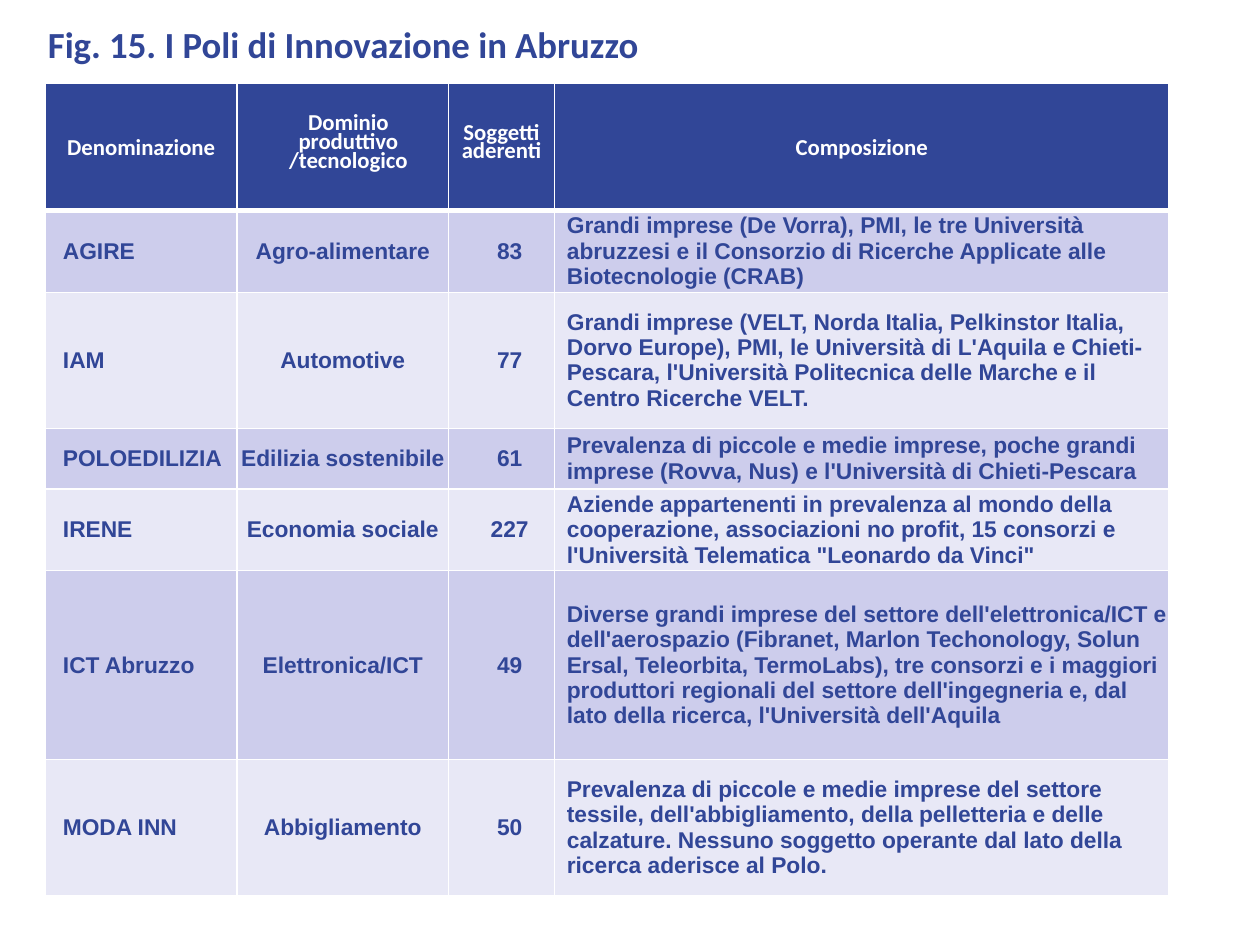
from lxml.etree import SubElement
from pptx import Presentation
from pptx.dml.color import RGBColor
from pptx.enum.text import MSO_ANCHOR, MSO_AUTO_SIZE, PP_ALIGN
from pptx.oxml.ns import qn
from pptx.util import Inches, Pt

COLORS = {"blue": "314697", "white": "FFFFFF", "odd": "CDCDEC", "even": "E8E8F6"}
TITLE = "Fig. 15. I Poli di Innovazione in Abruzzo"
HEADERS = ["Denominazione", "Dominio\nproduttivo\n/tecnologico", "Soggetti aderenti", "Composizione"]
CLUSTERS = [
    ("AGIRE", "Agro-alimentare", 83,
     "Grandi imprese (De Vorra), PMI, le tre Università abruzzesi e il Consorzio di "
     "Ricerche Applicate alle Biotecnologie (CRAB)"),
    ("IAM", "Automotive", 77,
     "Grandi imprese (VELT, Norda Italia, Pelkinstor Italia, Dorvo Europe), PMI, le "
     "Università di L'Aquila e Chieti-Pescara, l'Università Politecnica delle Marche e il "
     "Centro Ricerche VELT."),
    ("POLOEDILIZIA", "Edilizia sostenibile", 61,
     "Prevalenza di piccole e medie imprese, poche grandi imprese (Rovva, Nus) e "
     "l'Università di Chieti-Pescara"),
    ("IRENE", "Economia sociale", 227,
     "Aziende appartenenti in prevalenza al mondo della cooperazione, associazioni no "
     "profit, 15 consorzi e l'Università Telematica \"Leonardo da Vinci\""),
    ("ICT Abruzzo", "Elettronica/ICT", 49,
     "Diverse grandi imprese del settore dell'elettronica/ICT e dell'aerospazio "
     "(Fibranet, Marlon Techonology, Solun Ersal, Teleorbita, TermoLabs), tre consorzi e i "
     "maggiori produttori regionali del settore dell'ingegneria e, dal lato della ricerca, "
     "l'Università dell'Aquila"),
    ("MODA INN", "Abbigliamento", 50,
     "Prevalenza di piccole e medie imprese del settore tessile, dell'abbigliamento, della "
     "pelletteria e delle calzature. Nessuno soggetto operante dal lato della ricerca "
     "aderisce al Polo."),
]
COLUMN_WIDTHS = [1.52, 1.68, 0.84, 4.88]
ROW_HEIGHTS = [1.02, 0.65, 1.08, 0.48, 0.65, 1.5, 1.08]
CELL_MARGIN = 0.02
HEADER_INDENTS = [0, 0.09, 0, 0]
BODY_INDENTS = [0.12, 0, 0.13, 0.08]
HEADER_SPACING = [1.15, Pt(10.8), Pt(10.8), 1.15]
BODY_ALIGNMENT = [PP_ALIGN.LEFT, PP_ALIGN.CENTER, PP_ALIGN.CENTER, PP_ALIGN.LEFT]


def color(name):
    return RGBColor.from_string(COLORS[name])


def set_font(paragraph, name, size, color_name):
    font = paragraph.font
    font.name, font.size, font.bold = name, Pt(size), True
    font.color.rgb = color(color_name)


def set_borders(cell, top, bottom):
    """Draw white borders; top and bottom are widths in points, the sides are 1."""
    properties = cell._tc.get_or_add_tcPr()
    for side, width in (("L", 1), ("R", 1), ("T", top), ("B", bottom)):
        line = SubElement(properties, qn(f"a:ln{side}"), w=str(Pt(width)))
        fill = SubElement(line, qn("a:solidFill"))
        SubElement(fill, qn("a:srgbClr"), val=COLORS["white"])


def fill_cell(cell, row, column, text):
    header = row == 0
    indent = (HEADER_INDENTS if header else BODY_INDENTS)[column]
    set_borders(cell, top=3 if row <= 1 else 1, bottom=3 if header else 1)
    cell.fill.solid()
    cell.fill.fore_color.rgb = color("blue" if header else "odd" if row % 2 else "even")
    cell.vertical_anchor = MSO_ANCHOR.MIDDLE
    cell.margin_left = Inches(CELL_MARGIN + indent)
    cell.margin_right = Inches(CELL_MARGIN)
    cell.margin_top = cell.margin_bottom = 0
    cell.text_frame.text = str(text)
    for paragraph in cell.text_frame.paragraphs:
        if header:
            paragraph.alignment = PP_ALIGN.CENTER
            paragraph.line_spacing = HEADER_SPACING[column]
            set_font(paragraph, "Calibri", 13, "white")
        else:
            paragraph.alignment = BODY_ALIGNMENT[column]
            set_font(paragraph, "Arial", 13, "blue")


def add_title(slide):
    box = slide.shapes.add_textbox(Inches(0.29), Inches(0.15), Inches(5.98), Inches(0.45))
    frame = box.text_frame
    frame.word_wrap = True
    frame.auto_size = MSO_AUTO_SIZE.SHAPE_TO_FIT_TEXT
    frame.margin_left = frame.margin_right = Inches(0.09)
    frame.margin_top = frame.margin_bottom = Inches(0.04)
    paragraph = frame.paragraphs[0]
    paragraph.text = TITLE
    paragraph.line_spacing = 0.97
    set_font(paragraph, "Calibri", 21, "blue")


def add_cluster_table(slide):
    records = [HEADERS, *CLUSTERS]
    table = slide.shapes.add_table(
        len(records), len(HEADERS), Inches(0.36), Inches(0.65),
        Inches(sum(COLUMN_WIDTHS)), Inches(sum(ROW_HEIGHTS))).table
    for column, width in zip(table.columns, COLUMN_WIDTHS):
        column.width = Inches(width)
    for row, height in zip(table.rows, ROW_HEIGHTS):
        row.height = Inches(height)
    for row, record in enumerate(records):
        for column, text in enumerate(record):
            fill_cell(table.cell(row, column), row, column, text)


def main():
    presentation = Presentation()
    presentation.slide_width, presentation.slide_height = Inches(10), Inches(7.5)
    slide = presentation.slides.add_slide(presentation.slide_layouts[6])
    add_cluster_table(slide)
    add_title(slide)
    presentation.save("out.pptx")


if __name__ == "__main__":
    main()
